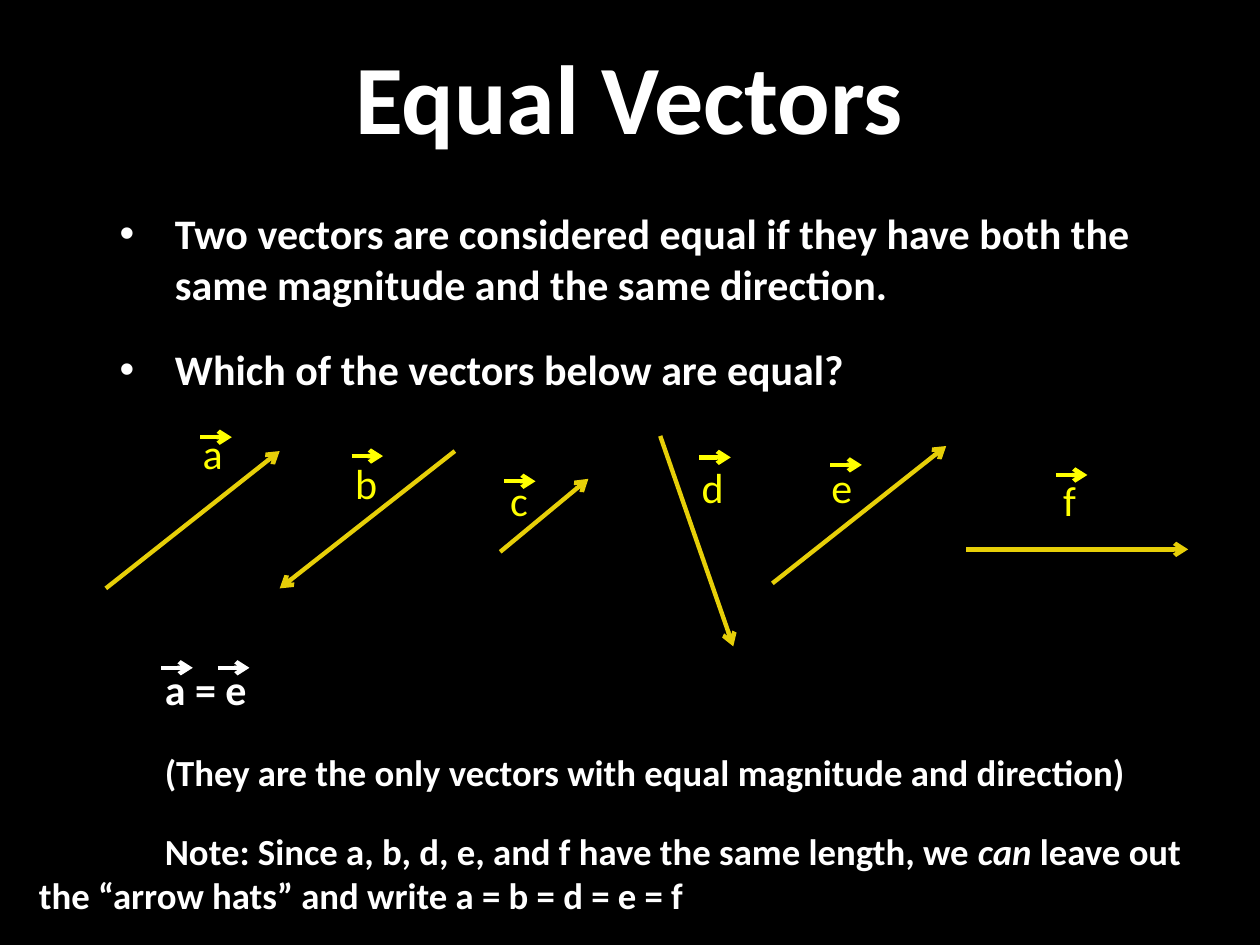
from lxml import etree
from pptx import Presentation
from pptx import util as u
from pptx.dml.color import RGBColor
from pptx.enum import shapes, text
from pptx.oxml.ns import qn

PX = 9144
WHITE, YELLOW, GOLD = "FFFFFF", "FFFF00", "E7CF08"
VECTORS = [
    ("a", (0, 133), (138, 24), (67, 0, 37), (75, 13)),
    ("b", (277, 24), (138, 133), (188, 24, 39), (195, 28)),
    ("c", (313, 104), (383, 46), (311, 38, 35), (316, 48)),
    ("d", (440, 12), (498, 179), (463, 27, 39), (471, 29)),
    ("e", (529, 129), (667, 20), (566, 27, 37), (575, 35)),
    ("f", (683, 102), (859, 102), (750, 38, 33), (754, 43)),
]


def px(n):
    """Turn px into EMU."""
    return u.Emu(n * PX)


def color(value):
    """Turn a hex string into a colour."""
    return RGBColor.from_string(value)


def add_text(s, box, paragraphs, size=24, fill=WHITE, bold=True, align=text.PP_ALIGN.LEFT,
             anchor=text.MSO_ANCHOR.TOP, wrap=True, before=0, margin=0, indent=0, bullet=None):
    """Add a text box; a paragraph is a list of (text, size, italic) runs or a string."""
    tf = s.shapes.add_textbox(*map(px, box)).text_frame
    tf.word_wrap, tf.vertical_anchor = wrap, anchor
    tf.auto_size = text.MSO_AUTO_SIZE.NONE if wrap else text.MSO_AUTO_SIZE.SHAPE_TO_FIT_TEXT
    for i, runs in enumerate(paragraphs):
        p = tf.add_paragraph() if i else tf.paragraphs[0]
        p.alignment = align
        if i:
            p.space_before = u.Pt(before)
        pPr = p._p.get_or_add_pPr()
        pPr.set("marL", str(px(margin)))
        pPr.set("indent", str(px(indent)))
        if bullet:
            etree.SubElement(pPr, qn("a:buFont"), typeface="Arial")
            etree.SubElement(pPr, qn("a:buChar"), char=bullet)
        for words, points, italic in [(runs, size, False)] if isinstance(runs, str) else runs:
            r = p.add_run()
            r.text = words
            f = r.font
            f.name, f.size, f.bold, f.italic = "Calibri", u.Pt(points), bold, italic
            f.color.rgb = color(fill)


def add_arrow(s, start, end, fill):
    """Add a straight line with an open arrowhead at its end."""
    sp = s.shapes.add_connector(shapes.MSO_CONNECTOR.STRAIGHT, *map(px, start + end))
    sp.line.color.rgb = color(fill)
    sp.line.width = u.Pt(2.5)
    etree.SubElement(sp.line._get_or_add_ln(), qn("a:tailEnd"), type="arrow")
    etree.SubElement(sp._element.spPr, qn("a:effectLst"))


def add_hat(s, x, y, fill):
    """Add the short arrow that marks a letter as a vector."""
    add_arrow(s, (x, y), (x + 25, y), fill)


def add_title(s, box):
    """Place the slide title."""
    add_text(s, box, ["Equal Vectors"], size=56, align=text.PP_ALIGN.CENTER,
             anchor=text.MSO_ANCHOR.MIDDLE)


def add_bullets(s, box):
    """Place the definition and the question."""
    add_text(s, box, [
        "Two vectors are considered equal if they have both the same magnitude "
        "and the same direction.",
        "Which of the vectors below are equal?",
    ], before=20, margin=44, indent=-44, bullet="•")


def add_vectors(s, left, top):
    """Place the six vectors with their labels and hats."""
    for name, (x1, y1), (x2, y2), (lx, ly, width), (hx, hy) in VECTORS:
        add_arrow(s, (left + x1, top + y1), (left + x2, top + y2), GOLD)
        add_text(s, (left + lx, top + ly, width, 50), [name], fill=YELLOW, bold=False, wrap=False)
        add_hat(s, left + hx, top + hy, YELLOW)


def add_answer(s, box):
    """Place the answer with its hats and the note."""
    left, top = box[:2]
    add_text(s, box, [
        "a = e",
        [("(They are the only vectors with equal magnitude and direction)", 21, False)],
        [("Note: Since a, b, d, e, and f have the same length, we ", 21, False),
         ("can", 21, True),
         (" leave out the “arrow hats” and write a = b = d = e = f", 21, False)],
    ], before=20, indent=100)
    for x in (107, 152):
        add_hat(s, left + x, top + 8, WHITE)


def main():
    """Build and save the slide."""
    prs = Presentation()
    prs.slide_width, prs.slide_height = px(1000), px(750)
    s = prs.slides.add_slide(prs.slide_layouts[6])
    s.background.fill.solid()
    s.background.fill.fore_color.rgb = color("000000")
    add_title(s, (85, 12, 829, 127))
    add_bullets(s, (85, 160, 829, 192))
    add_vectors(s, 84, 334)
    add_answer(s, (21, 522, 965, 200))
    prs.save("out.pptx")


if __name__ == "__main__":
    main()
